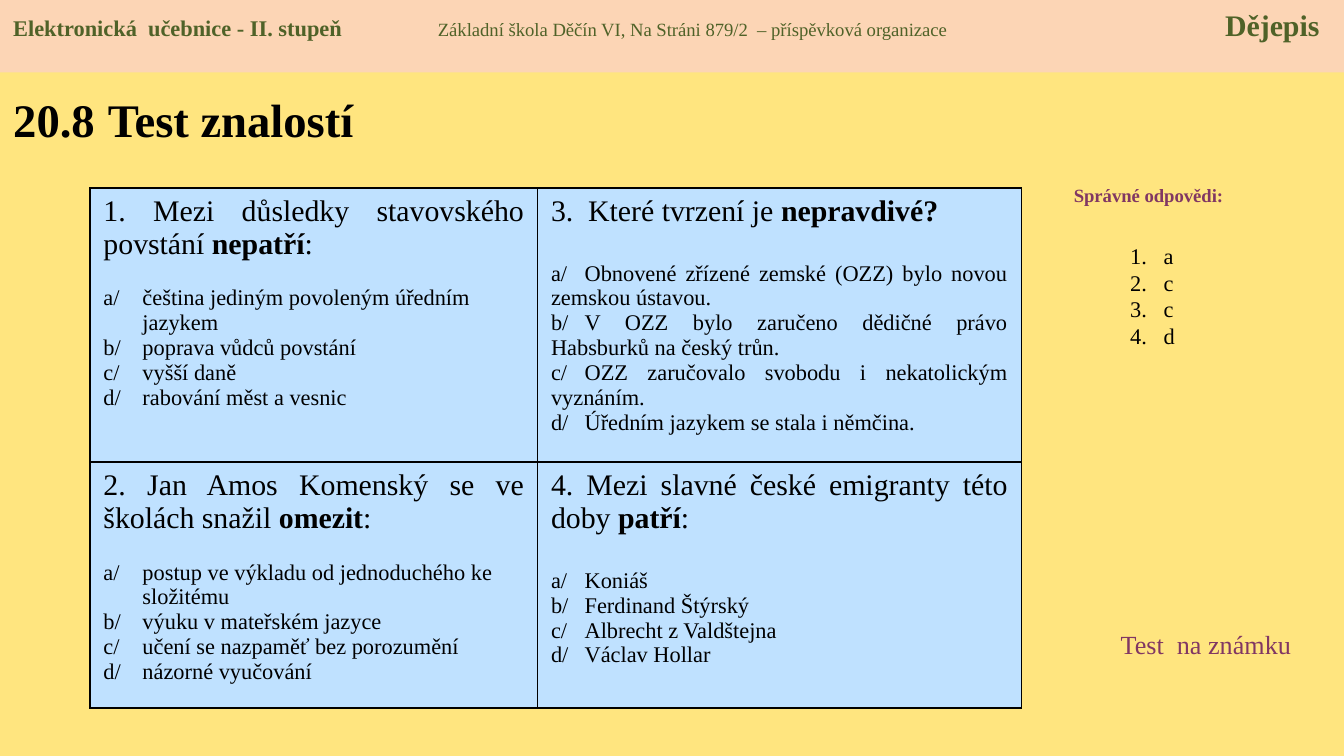
"""Build a history quiz slide with four questions and their answers."""
from dataclasses import dataclass

from lxml import etree
from pptx import Presentation
from pptx.dml.color import RGBColor
from pptx.enum.shapes import MSO_SHAPE
from pptx.enum.text import MSO_ANCHOR, PP_ALIGN
from pptx.oxml.ns import qn
from pptx.util import Inches, Pt

RECTANGLE = MSO_SHAPE.RECTANGLE
TOP, MIDDLE = MSO_ANCHOR.TOP, MSO_ANCHOR.MIDDLE
LEFT, CENTER, JUSTIFY = PP_ALIGN.LEFT, PP_ALIGN.CENTER, PP_ALIGN.JUSTIFY


@dataclass(frozen=True)
class Theme:
    font: str = "Times New Roman"
    number_font: str = "Calibri"
    background: str = "FFE57F"
    band: str = "FCD5B5"
    band_text: str = "4F6228"
    cell: str = "BFE1FF"
    ink: str = "000000"
    accent: str = "813763"
    title_gap: int = 28
    title: int = 25
    question: int = 16
    note: int = 14
    body: int = 12
    small: int = 10


THEME = Theme()

QUESTIONS = [
    [
        ("1. Mezi důsledky stavovského povstání *nepatří*:",
         ["čeština jediným povoleným úředním jazykem", "poprava vůdců povstání",
          "vyšší daně", "rabování měst a vesnic"], 13.3),
        ("3.  Které tvrzení je *nepravdivé?*",
         ["Obnovené zřízené zemské (OZZ) bylo novou zemskou ústavou.",
          "V OZZ bylo zaručeno dědičné právo Habsburků na český trůn.",
          "OZZ zaručovalo svobodu i nekatolickým vyznáním.",
          "Úředním jazykem se stala i němčina."], 17.7),
    ],
    [
        ("2. Jan Amos Komenský se ve školách snažil *omezit*:",
         ["postup ve výkladu od jednoduchého ke složitému", "výuku v mateřském jazyce",
          "učení se nazpaměť bez porozumění", "názorné vyučování"], 13.3),
        ("4. Mezi slavné české emigranty této doby *patří*:",
         ["Koniáš", "Ferdinand Štýrský", "Albrecht z Valdštejna", "Václav Hollar"], 17.7),
    ],
]
ANSWERS = ["a", "c", "c", "d"]


def rgb(color):
    return RGBColor.from_string(color)


def write(paragraph, text, size=THEME.body, color=THEME.ink, bold=False, align=LEFT):
    """Add text to a paragraph; asterisks switch bold on and off."""
    paragraph.alignment = align
    for index, part in enumerate(text.split("*")):
        if part:
            run = paragraph.add_run()
            run.text = part
            run.font.name = THEME.font
            run.font.size = Pt(size)
            run.font.color.rgb = rgb(color)
            run.font.bold = bold or index % 2 == 1


def next_paragraph(frame, index):
    return frame.paragraphs[0] if index == 0 else frame.add_paragraph()


def set_hanging(paragraph, indent):
    properties = paragraph._p.get_or_add_pPr()
    properties.set("marL", str(Inches(indent)))
    properties.set("indent", str(-Inches(indent)))


def set_tabs(paragraph, *stops):
    tabs = etree.SubElement(paragraph._p.get_or_add_pPr(), qn("a:tabLst"))
    for position, side in stops:
        etree.SubElement(tabs, qn("a:tab"), pos=str(Inches(position)), algn=side)


def add_text_box(slide, left, top, width, height, anchor=TOP):
    box = slide.shapes.add_textbox(Inches(left), Inches(top), Inches(width), Inches(height))
    frame = box.text_frame
    frame.word_wrap = True
    frame.vertical_anchor = anchor
    return frame


def add_header(slide):
    band = slide.shapes.add_shape(RECTANGLE, 0, 0, Inches(10), Inches(0.54))
    band.shadow.inherit = False
    band.fill.solid()
    band.fill.fore_color.rgb = rgb(THEME.band)
    band.line.fill.background()
    band.text_frame.vertical_anchor = TOP
    heading = band.text_frame.paragraphs[0]
    set_tabs(heading, (3.16, "l"), (9.72, "r"))
    for text, size, bold in [
        ("Elektronická  učebnice - II. stupeň\t", THEME.body, True),
        ("Základní škola Děčín VI, Na Stráni 879/2  – příspěvková organizace\t",
         THEME.small, False),
        ("Dějepis", THEME.question, True),
    ]:
        write(heading, text, size=size, color=THEME.band_text, bold=bold)


def add_title(slide):
    title = add_text_box(slide, 0, 0.54, 3.62, 0.65, anchor=MIDDLE).paragraphs[0]
    for text, size in [("20.8", THEME.title), (" ", THEME.title_gap),
                       ("Test znalostí", THEME.title)]:
        write(title, text, size=size, bold=True)


def style_cell(cell):
    properties = cell._tc.get_or_add_tcPr()
    for side in ("lnL", "lnR", "lnT", "lnB"):
        border = etree.SubElement(properties, qn(f"a:{side}"), w=str(Pt(1)))
        fill = etree.SubElement(border, qn("a:solidFill"))
        etree.SubElement(fill, qn("a:srgbClr"), val=THEME.ink)
    cell.fill.solid()
    cell.fill.fore_color.rgb = rgb(THEME.cell)


def fill_question(cell, question, options, gap, hanging):
    style_cell(cell)
    frame = cell.text_frame
    write(frame.paragraphs[0], question, size=THEME.question, align=JUSTIFY)
    for index, (letter, option) in enumerate(zip("abcd", options)):
        paragraph = frame.add_paragraph()
        if index == 0:
            paragraph.space_before = Pt(gap)
        if hanging:
            set_hanging(paragraph, 0.29)
        else:
            set_tabs(paragraph, (0.25, "l"))
        write(paragraph, f"{letter}/\t{option}", align=LEFT if hanging else JUSTIFY)


def add_questions(slide):
    table = slide.shapes.add_table(
        2, 2, Inches(0.67), Inches(1.4), Inches(6.93), Inches(3.87)).table
    table.first_row = table.horz_banding = False
    for column, width in zip(table.columns, (3.33, 3.6)):
        column.width = Inches(width)
    for row, height in zip(table.rows, (2.04, 1.83)):
        row.height = Inches(height)
    for row, questions in enumerate(QUESTIONS):
        for column, (question, options, gap) in enumerate(questions):
            fill_question(table.cell(row, column), question, options, gap, column == 0)


def add_answers(slide):
    frame = add_text_box(slide, 8.31, 1.75, 0.55, 1.1)
    for index, answer in enumerate(ANSWERS):
        paragraph = next_paragraph(frame, index)
        set_hanging(paragraph, 0.25)
        properties = paragraph._p.get_or_add_pPr()
        etree.SubElement(properties, qn("a:buFont"), typeface=THEME.number_font)
        etree.SubElement(properties, qn("a:buAutoNum"), type="arabicPeriod")
        write(paragraph, answer)


def main():
    deck = Presentation()
    deck.slide_width = Inches(10)
    deck.slide_height = deck.slide_width * 9 // 16
    slide = deck.slides.add_slide(deck.slide_layouts[6])
    slide.background.fill.solid()
    slide.background.fill.fore_color.rgb = rgb(THEME.background)

    add_title(slide)
    answers_label = add_text_box(slide, 7.76, 1.32, 1.57, 0.27)
    write(answers_label.paragraphs[0], "Správné odpovědi:", size=THEME.small,
          color=THEME.accent, bold=True, align=CENTER)
    add_questions(slide)
    add_answers(slide)
    grading_note = add_text_box(slide, 8.24, 4.63, 1.57, 0.34)
    write(grading_note.paragraphs[0], "Test  na známku", size=THEME.note, color=THEME.accent)
    add_header(slide)
    deck.save("out.pptx")


if __name__ == "__main__":
    main()
